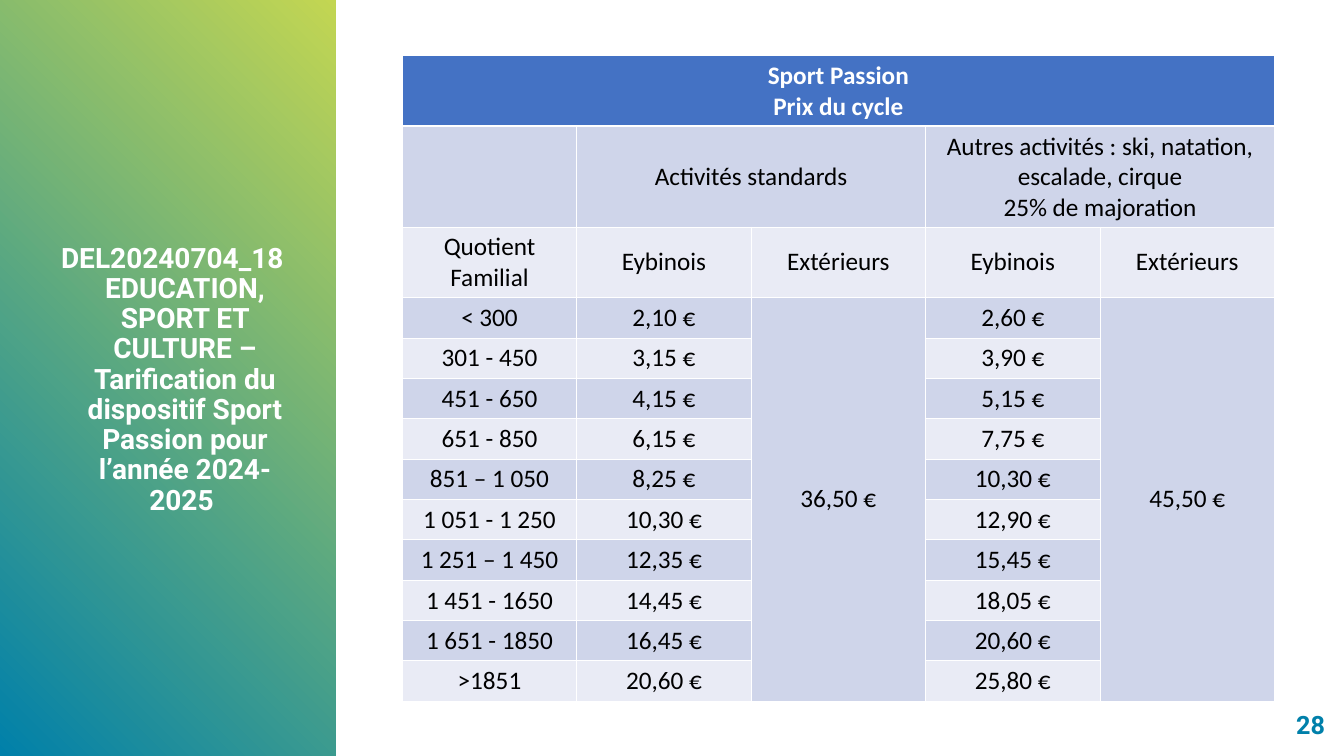
from lxml import etree
from pptx import Presentation
from pptx import util as u
from pptx.dml import color
from pptx.enum import shapes, text
from pptx.oxml import ns

WHITE, BLACK, TEAL, LIME = "FFFFFF", "000000", "0080AA", "C3D652"
HEADER, BAND_DARK, BAND_LIGHT = "4472C4", "CFD5EA", "E9EBF5"

TITLE = ("DEL20240704_18 EDUCATION, SPORT ET CULTURE – "
         "Tarification du dispositif Sport Passion pour l’année 2024-2025 ")
PRICES = [
    ("< 300", "2,10 €", "2,60 €"),
    ("301 - 450", "3,15 €", "3,90 €"),
    ("451 - 650", "4,15 €", "5,15 €"),
    ("651 - 850", "6,15 €", "7,75 €"),
    ("851 – 1 050", "8,25 €", "10,30 €"),
    ("1 051 - 1 250", "10,30 €", "12,90 €"),
    ("1 251 – 1 450", "12,35 €", "15,45 €"),
    ("1 451 - 1650", "14,45 €", "18,05 €"),
    ("1 651 - 1850", "16,45 €", "20,60 €"),
    (">1851", "20,60 €", "25,80 €"),
]
ROWS = [
    ["Sport Passion\nPrix du cycle", "", "", "", ""],
    ["", "Activités standards", "",
     "Autres activités : ski, natation, escalade, cirque\n25% de majoration", ""],
    ["Quotient Familial", "Eybinois", "Extérieurs", "Eybinois", "Extérieurs"],
]
ROWS += [[quotient, standard, "", other, ""] for quotient, standard, other in PRICES]
ROWS[3][2], ROWS[3][4] = "36,50 €", "45,50 €"
MERGES = [(0, 0, 0, 4), (1, 1, 1, 2), (1, 3, 1, 4), (3, 2, 12, 2), (3, 4, 12, 4)]
ROW_HEIGHTS = [0.68, 0.98, 0.68] + [0.39] * len(PRICES)


def rgb(value):
    return color.RGBColor.from_string(value)


class SlideBuilder:
    heading_font = "Roboto"
    table_font = "Calibri"

    def __init__(self, presentation):
        self.slide = presentation.slides.add_slide(presentation.slide_layouts[5])

    def add_text(self, paragraph, words, font, size, ink, bold, align):
        paragraph.alignment = align
        run = paragraph.add_run()
        run.text = words
        run.font.name = font
        run.font.size = u.Pt(size)
        run.font.bold = bold
        run.font.color.rgb = rgb(ink)

    def gradient_panel(self, left, top, width, height):
        panel = self.slide.shapes.add_shape(
            shapes.MSO_SHAPE.RECTANGLE, u.Inches(left), u.Inches(top),
            u.Inches(width), u.Inches(height))
        panel.shadow.inherit = False
        panel.line.fill.background()
        panel.fill.gradient()
        panel.fill.gradient_angle = 45
        for stop, shade, position in zip(panel.fill.gradient_stops, (TEAL, LIME), (0, 1)):
            stop.color.rgb = rgb(shade)
            stop.position = position
        tree = self.slide.shapes.title.element.getparent()
        tree.insert(2, panel.element)

    def title(self, words, left, top, width, height):
        title = self.slide.shapes.title
        title.left, title.top = u.Inches(left), u.Inches(top)
        title.width, title.height = u.Inches(width), u.Inches(height)
        frame = title.text_frame
        frame.word_wrap = True
        frame.auto_size = text.MSO_AUTO_SIZE.NONE
        frame.vertical_anchor = text.MSO_ANCHOR.TOP
        paragraph = frame.paragraphs[0]
        paragraph.line_spacing = 0.9
        properties = paragraph._p.get_or_add_pPr()
        properties.set("marL", str(u.Inches(0.25)))
        properties.set("indent", str(u.Inches(-0.25)))
        self.add_text(paragraph, words, self.heading_font, 20, WHITE, True,
                      text.PP_ALIGN.CENTER)

    def page_number(self, number, left, top, width, height):
        box = self.slide.shapes.add_textbox(
            u.Inches(left), u.Inches(top), u.Inches(width), u.Inches(height))
        frame = box.text_frame
        frame.word_wrap = True
        frame.vertical_anchor = text.MSO_ANCHOR.MIDDLE
        self.add_text(frame.paragraphs[0], number, self.heading_font, 18, TEAL, True,
                      text.PP_ALIGN.RIGHT)

    def cell_borders(self, cell, row):
        properties = cell._tc.get_or_add_tcPr()
        widths = {"lnL": 0.54, "lnR": 0.54,
                  "lnT": 1.61 if row == 1 else 0.54,
                  "lnB": 1.61 if row == 0 else 0.54}
        for side, points in widths.items():
            line = etree.SubElement(properties, ns.qn(f"a:{side}"), w=str(u.Pt(points)))
            fill = etree.SubElement(line, ns.qn("a:solidFill"))
            etree.SubElement(fill, ns.qn("a:srgbClr"), val=WHITE)

    def table_cell(self, cell, words, row):
        self.cell_borders(cell, row)
        cell.vertical_anchor = text.MSO_ANCHOR.MIDDLE
        cell.fill.solid()
        band = BAND_DARK if row % 2 else BAND_LIGHT
        cell.fill.fore_color.rgb = rgb(HEADER if row == 0 else band)
        if not words:
            return
        frame = cell.text_frame
        for index, line in enumerate(words.split("\n")):
            paragraph = frame.add_paragraph() if index else frame.paragraphs[0]
            self.add_text(paragraph, line, self.table_font, 18,
                          BLACK if row else WHITE, row == 0, text.PP_ALIGN.CENTER)

    def table(self, rows, heights, merges, left, top, column_width):
        columns = len(rows[0])
        table = self.slide.shapes.add_table(
            len(rows), columns, u.Inches(left), u.Inches(top),
            u.Inches(column_width * columns), u.Inches(sum(heights))).table
        table.first_row = table.horz_banding = False
        for column in table.columns:
            column.width = u.Inches(column_width)
        for row, (values, height) in enumerate(zip(rows, heights)):
            table.rows[row].height = u.Inches(height)
            for column, words in enumerate(values):
                self.table_cell(table.cell(row, column), words, row)
        for first_row, first_column, last_row, last_column in merges:
            table.cell(first_row, first_column).merge(table.cell(last_row, last_column))


def main():
    presentation = Presentation()
    presentation.slide_width = u.Inches(13.33)
    presentation.slide_height = u.Inches(7.5)
    builder = SlideBuilder(presentation)
    builder.gradient_panel(0, 0, 3.33, 7.5)
    builder.page_number("28", 9.52, 6.98, 3.72, 0.41)
    builder.title(TITLE, 0.37, 2.37, 2.68, 5.45)
    builder.table(ROWS, ROW_HEIGHTS, MERGES, 3.99, 0.55, 1.73)
    presentation.save("out.pptx")


if __name__ == "__main__":
    main()
